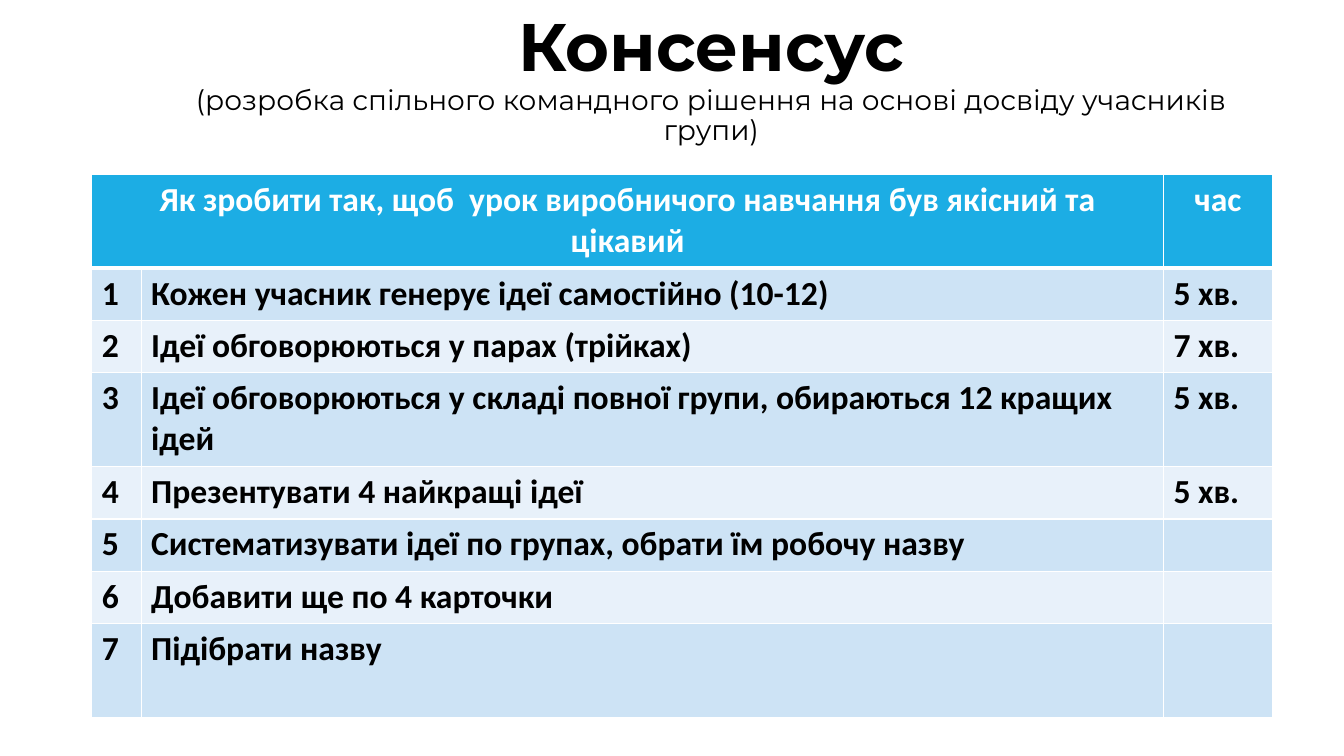
from lxml import etree
from pptx import Presentation
from pptx.dml.color import RGBColor
from pptx.enum.text import MSO_ANCHOR, MSO_AUTO_SIZE, PP_ALIGN
from pptx.oxml.ns import qn
from pptx.util import Inches, Pt

BLACK = RGBColor(0x00, 0x00, 0x00)
WHITE = RGBColor(0xFF, 0xFF, 0xFF)
HEADER_BLUE = RGBColor(0x1C, 0xAD, 0xE4)
BAND_DARK = RGBColor(0xCD, 0xE3, 0xF5)
BAND_LIGHT = RGBColor(0xE8, 0xF1, 0xFA)

TITLE = "Консенсус"
SUBTITLE = "(розробка спільного командного рішення на основі досвіду учасників групи)"
QUESTION = "Як зробити так, щоб  урок виробничого навчання був якісний та цікавий"
STEPS = [
    ("Кожен учасник генерує ідеї самостійно (10-12)", "5 хв."),
    ("Ідеї обговорюються у парах (трійках)", "7 хв."),
    ("Ідеї обговорюються у складі повної групи, обираються 12 кращих ідей", "5 хв."),
    ("Презентувати 4 найкращі ідеї", "5 хв."),
    ("Систематизувати ідеї по групах, обрати їм робочу назву", ""),
    ("Добавити ще по 4 карточки", ""),
    ("Підібрати назву", ""),
]
COLUMN_WIDTHS = [0.49, 10.14, 1.08]
ROW_HEIGHT, TALL_ROW_HEIGHT = 0.52, 0.93
TALL_ROWS = {0, 3, 7}


class SlideBuilder:
    title_font = "Montserrat"
    table_font = "Calibri"
    table_size = 24

    def __init__(self, page):
        self.page = page

    def format_span(self, span, name, size, color, bold):
        span.font.name = name
        span.font.size = Pt(size)
        span.font.color.rgb = color
        span.font.bold = bold

    def title(self, heading, note, left, top, width, height):
        box = self.page.shapes.title
        box.left, box.top = Inches(left), Inches(top)
        box.width, box.height = Inches(width), Inches(height)
        frame = box.text_frame
        frame.word_wrap = True
        frame.auto_size = MSO_AUTO_SIZE.NONE
        frame.vertical_anchor = MSO_ANCHOR.MIDDLE
        para = frame.paragraphs[0]
        para.text = f"{heading}\v{note}"
        para.alignment = PP_ALIGN.CENTER
        para.line_spacing = 0.9
        for span, size, bold in zip(para.runs, (48, 20), (True, False)):
            self.format_span(span, self.title_font, size, BLACK, bold)

    def border(self, cell, side, points):
        line = etree.SubElement(cell._tc.get_or_add_tcPr(), qn(f"a:ln{side}"), w=str(Pt(points)))
        fill = etree.SubElement(line, qn("a:solidFill"))
        etree.SubElement(fill, qn("a:srgbClr"), val=str(WHITE))

    def cell(self, cell, text, row):
        header = row == 0
        # Borders go before the fill in the cell properties
        for side in "LRTB":
            under_header = (row, side) in {(0, "B"), (1, "T")}
            self.border(cell, side, 3 if under_header else 1)
        cell.fill.solid()
        cell.fill.fore_color.rgb = HEADER_BLUE if header else BAND_DARK if row % 2 else BAND_LIGHT
        para = cell.text_frame.paragraphs[0]
        para.text = text
        para.alignment = PP_ALIGN.CENTER if header else PP_ALIGN.LEFT
        for span in para.runs:
            self.format_span(span, self.table_font, self.table_size, WHITE if header else BLACK, True)

    def table(self, rows, widths, heights, left, top):
        frame = self.page.shapes.add_table(
            len(rows), len(widths), Inches(left), Inches(top),
            Inches(sum(widths)), Inches(sum(heights)))
        table = frame.table
        for column, width in zip(table.columns, widths):
            column.width = Inches(width)
        for row, height in zip(table.rows, heights):
            row.height = Inches(height)
        for row_index, texts in enumerate(rows):
            for column_index, text in enumerate(texts):
                self.cell(table.cell(row_index, column_index), text, row_index)
        table.cell(0, 0).merge(table.cell(0, 1))


def main():
    deck = Presentation()
    deck.slide_width, deck.slide_height = Inches(13.33), Inches(7.5)
    builder = SlideBuilder(deck.slides.add_slide(deck.slide_layouts[5]))

    # Title with its explanation
    builder.title(TITLE, SUBTITLE, 1.4, 0.07, 11.31, 1.45)

    # Numbered steps with their time limits
    rows = [(QUESTION, "", "час")]
    rows += [(str(number), step, time) for number, (step, time) in enumerate(STEPS, 1)]
    heights = [TALL_ROW_HEIGHT if index in TALL_ROWS else ROW_HEIGHT for index in range(len(rows))]
    builder.table(rows, COLUMN_WIDTHS, heights, 0.91, 1.73)

    deck.save("out.pptx")


if __name__ == "__main__":
    main()
